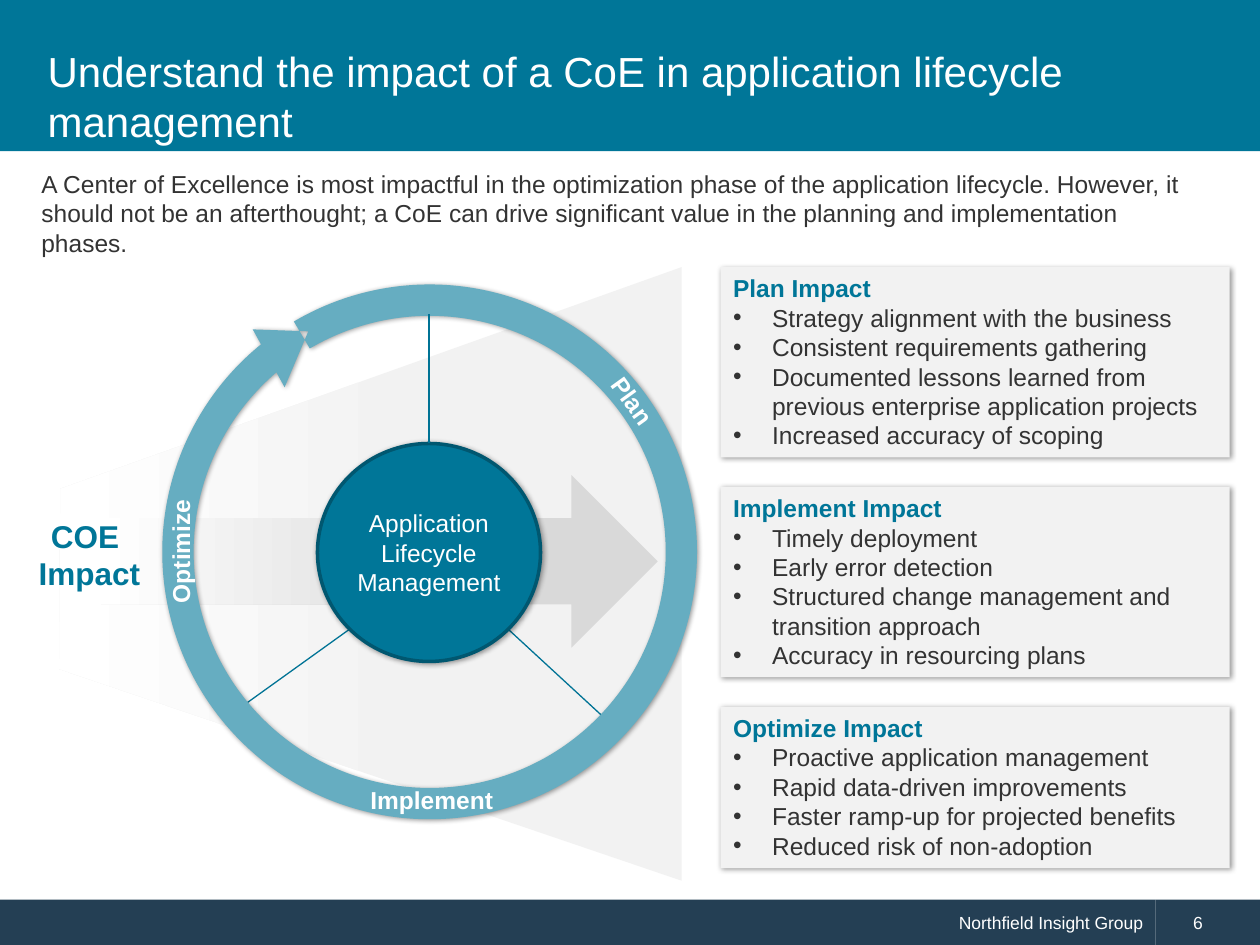
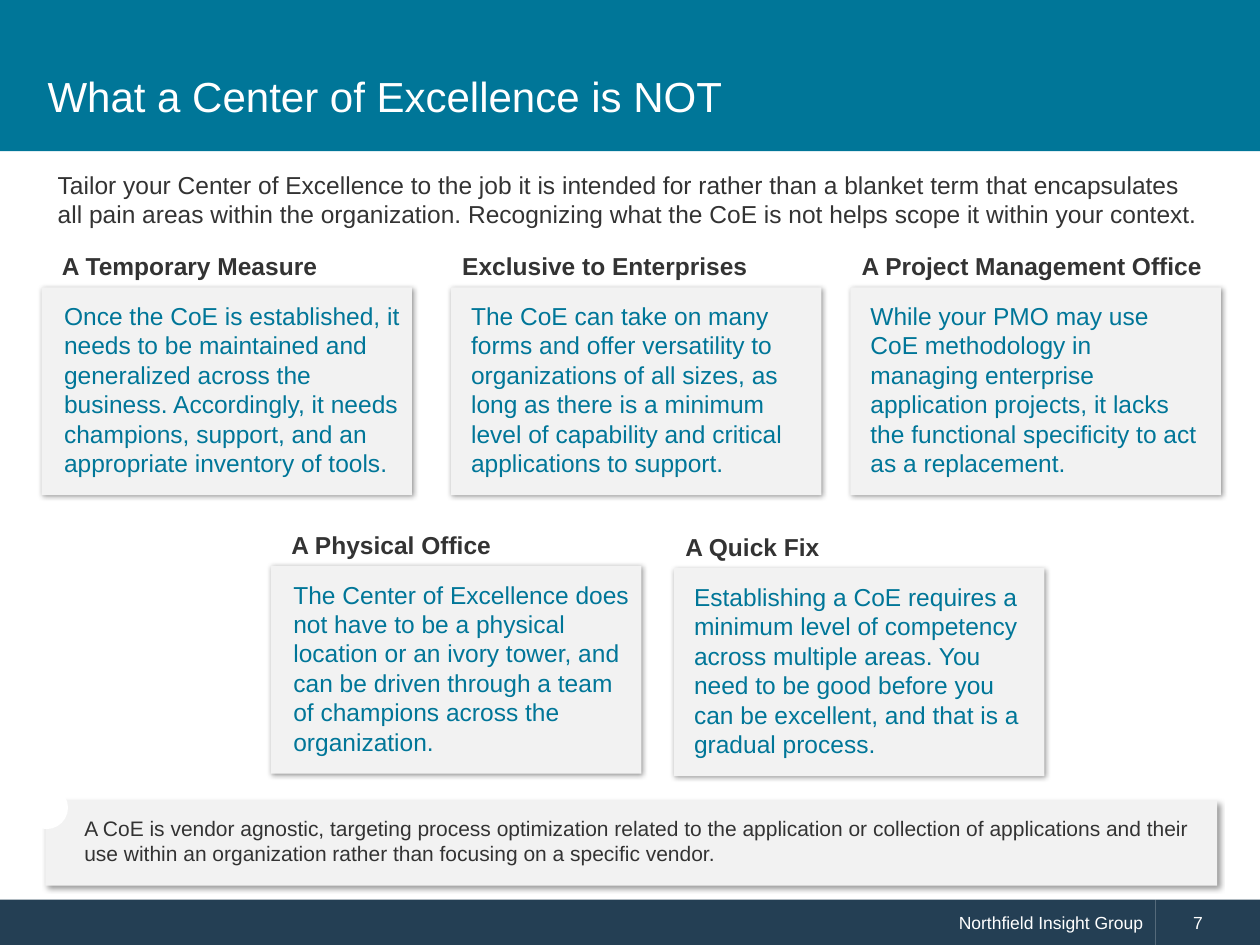
import dataclasses
import typing

import lxml.etree
import pptx
import pptx.dml.color
import pptx.enum.shapes
import pptx.enum.text
import pptx.oxml.ns
import pptx.util

SHAPES = pptx.enum.shapes.MSO_SHAPE
ALIGN = pptx.enum.text.PP_ALIGN
ANCHOR = pptx.enum.text.MSO_ANCHOR
GROW = pptx.enum.text.MSO_AUTO_SIZE.SHAPE_TO_FIT_TEXT
Color = pptx.dml.color.RGBColor
qn = pptx.oxml.ns.qn

# The slide is a grid of 100 columns by 75 rows; every cell is square.
COLUMNS, ROWS = 100, 75
CELL = pptx.util.Inches(10) // COLUMNS


@dataclasses.dataclass(frozen=True)
class Theme:
    font: str = "Arial"
    white: Color = Color.from_string("FFFFFF")
    ink: Color = Color.from_string("333333")
    teal: Color = Color.from_string("007698")
    teal_dark: Color = Color.from_string("005770")
    teal_light: Color = Color.from_string("66ADC1")
    spoke: Color = Color.from_string("007395")
    navy: Color = Color.from_string("243F54")
    panel: Color = Color.from_string("F2F2F2")
    arrow: Color = Color.from_string("D9D9D9")
    title: int = 24
    callout: int = 18
    body: int = 14
    note: int = 12
    footer: int = 10


THEME = Theme()


class Box(typing.NamedTuple):
    """Left, top, width and height in grid cells."""
    left: float
    top: float
    width: float
    height: float


@dataclasses.dataclass(frozen=True)
class Line:
    """One paragraph of text."""
    text: str
    color: Color = THEME.ink
    size: int = THEME.body
    bold: bool = False
    alignment: typing.Any = ALIGN.LEFT
    bulleted: bool = False


@dataclasses.dataclass(frozen=True)
class Panel:
    heading: str
    bullets: tuple[str, ...]
    height: float


@dataclasses.dataclass(frozen=True)
class Card:
    heading: str
    body: str
    left: float
    top: float
    heading_shift: float = -0.1
    centred: bool = False


@dataclasses.dataclass(frozen=True)
class PhaseLabel:
    text: str
    box: Box
    rotation: float = 0


PANELS = (
    Panel("Plan Impact", (
        "Strategy alignment with the business",
        "Consistent requirements gathering",
        "Documented lessons learned from previous enterprise application projects",
        "Increased accuracy of scoping"), 15.1),
    Panel("Implement Impact", (
        "Timely deployment",
        "Early error detection",
        "Structured change management and transition approach",
        "Accuracy in resourcing plans"), 15.1),
    Panel("Optimize Impact", (
        "Proactive application management",
        "Rapid data-driven improvements",
        "Faster ramp-up for projected benefits",
        "Reduced risk of non-adoption"), 12.8),
)
PANEL_TOP, PANEL_PITCH = 21.2, 17.45

PHASES = (
    PhaseLabel("Plan", Box(47.1, 30.2, 6.3, 3.4), 54.2),
    PhaseLabel("Implement", Box(28.4, 61.8, 12.1, 3.4)),
    PhaseLabel("Optimize", Box(8.8, 41.6, 11.1, 3.4), 270),
)

CARDS = (
    Card("A Temporary Measure",
         "Once the CoE is established, it needs to be maintained and generalized across the "
         "business. Accordingly, it needs champions, support, and an appropriate inventory of tools.",
         3.3, 22.8, -3.3, True),
    Card("Exclusive to Enterprises",
         "The CoE can take on many forms and offer versatility to organizations of all sizes, as "
         "long as there is a minimum level of capability and critical applications to support.",
         35.8, 22.8),
    Card("A Project Management Office",
         "While your PMO may use CoE methodology in managing enterprise application projects, it "
         "lacks the functional specificity to act as a replacement.",
         67.5, 22.8),
    Card("A Physical Office",
         "The Center of Excellence does not have to be a physical location or an ivory tower, and "
         "can be driven through a team of champions across the organization.",
         21.5, 44.9, -5.5, True),
    Card("A Quick Fix",
         "Establishing a CoE requires a minimum level of competency across multiple areas. You need "
         "to be good before you can be excellent, and that is a gradual process.",
         53.5, 45.1),
)


def cells(count: float) -> int:
    return round(count * CELL)


def apply_format(target: typing.Any, values: dict[str, typing.Any]) -> None:
    for name, value in values.items():
        setattr(target, name, value)


def write(shape: typing.Any, lines: typing.Sequence[Line], **frame_format: typing.Any) -> None:
    """Fill a shape with paragraphs; frame_format overrides text frame attributes."""
    frame = shape.text_frame
    apply_format(frame, {"word_wrap": True, "vertical_anchor": ANCHOR.TOP} | frame_format)
    for index, line in enumerate(lines):
        paragraph = frame.add_paragraph() if index else frame.paragraphs[0]
        paragraph.alignment = line.alignment
        run = paragraph.add_run()
        run.text = line.text
        apply_format(run.font, {"name": THEME.font, "size": pptx.util.Pt(line.size),
                                "bold": line.bold})
        run.font.color.rgb = line.color
        if line.bulleted:
            properties = paragraph._p.get_or_add_pPr()
            indent = cells(3.1)
            properties.set("marL", str(indent))
            properties.set("indent", str(-indent))
            lxml.etree.SubElement(properties, qn("a:buFont"), typeface=THEME.font)
            lxml.etree.SubElement(properties, qn("a:buChar"), char="•")


def add_text(slide: typing.Any, box: Box, *lines: Line, **frame_format: typing.Any) -> typing.Any:
    shape = slide.shapes.add_textbox(*map(cells, box))
    write(shape, lines, **frame_format)
    return shape


def add_block(slide: typing.Any, box: Box, color: Color | None = None,
              preset: typing.Any = SHAPES.RECTANGLE, shadow_distance: float = 0) -> typing.Any:
    """Add a borderless preset shape, with a soft shadow if a distance in points is given."""
    shape = slide.shapes.add_shape(preset, *map(cells, box))
    make_plain(shape)
    if color is not None:
        shape.fill.solid()
        shape.fill.fore_color.rgb = color
    if shadow_distance:
        effects = shape._element.spPr.find(qn("a:effectLst"))
        shadow = lxml.etree.SubElement(
            effects, qn("a:outerShdw"), blurRad=str(pptx.util.Pt(3)),
            dist=str(pptx.util.Pt(shadow_distance)), dir="2700000", algn="tl", rotWithShape="0")
        black = lxml.etree.SubElement(shadow, qn("a:srgbClr"), val="000000")
        lxml.etree.SubElement(black, qn("a:alpha"), val="40000")
    return shape


def make_plain(shape: typing.Any) -> None:
    shape.shadow.inherit = False
    shape.line.fill.background()


def fade_left(shape: typing.Any, color: Color, start: float) -> None:
    """Fade from a colour on the right to white on the left."""
    shape.fill.gradient()
    shape.fill.gradient_angle = 180
    stops = ((start, color), (1, THEME.white))
    for stop, (position, stop_color) in zip(shape.fill.gradient_stops, stops):
        stop.color.rgb = stop_color
        stop.position = position


def add_spoke(slide: typing.Any, *ends: float) -> typing.Any:
    spoke = slide.shapes.add_connector(pptx.enum.shapes.MSO_CONNECTOR.STRAIGHT, *map(cells, ends))
    spoke.line.color.rgb = THEME.spoke
    spoke.line.width = pptx.util.Pt(0.75)
    lxml.etree.SubElement(spoke._element.spPr, qn("a:effectLst"))
    return spoke


def add_base_slide(presentation: typing.Any, title: str, number: int) -> typing.Any:
    """Add a blank slide with the title band and the footer."""
    slide = presentation.slides.add_slide(presentation.slide_layouts[6])
    footer = add_block(slide, Box(0, 71.4, 91.7, 3.6), THEME.navy)
    write(footer, [Line("Northfield Insight Group", THEME.white, THEME.footer,
                        alignment=ALIGN.RIGHT)], vertical_anchor=ANCHOR.MIDDLE)
    page = add_block(slide, Box(91.7, 71.4, 8.3, 3.6), THEME.navy)
    write(page, [Line(str(number), THEME.white, THEME.footer)],
          vertical_anchor=ANCHOR.MIDDLE, margin_left=cells(3))
    add_block(slide, Box(0, 0, COLUMNS, 12), THEME.teal)
    add_text(slide, Box(2.8, 2.8, 94.3, 9.6), Line(title, THEME.white, THEME.title),
             vertical_anchor=ANCHOR.MIDDLE)
    return slide


def add_lifecycle(slide: typing.Any) -> None:
    corners = [tuple(map(cells, corner))
               for corner in ((54.1, 21.2), (54.1, 69.9), (4.7, 53.1), (4.8, 38.8))]
    builder = slide.shapes.build_freeform(*corners[0])
    builder.add_line_segments(corners[1:], close=True)
    beam = builder.convert_to_shape()
    make_plain(beam)
    fade_left(beam, THEME.panel, 0.44)
    arrow = add_block(slide, Box(8, 37.7, 44.2, 13.7), preset=SHAPES.RIGHT_ARROW)
    fade_left(arrow, THEME.arrow, 0.35)

    add_spoke(slide, 40.4, 50, 48.1, 57.1)
    add_spoke(slide, 27.8, 49.9, 19.3, 56)
    ring = add_block(slide, Box(11.5, 21.2, 45.2, 45.2), THEME.teal_light,
                     SHAPES.CIRCULAR_ARROW, 1)
    for index, value in enumerate((0.055, 6.557, 138.152, 143.692, 0.058)):
        ring.adjustments[index] = value
    hub = add_block(slide, Box(25.2, 35.2, 17.7, 17.3), THEME.teal, SHAPES.OVAL, 1)
    hub.line.color.rgb = THEME.teal_dark
    hub.line.width = pptx.util.Pt(2)
    write(hub, [Line("Application Lifecycle Management", THEME.white, alignment=ALIGN.CENTER)],
          vertical_anchor=ANCHOR.MIDDLE, margin_left=cells(0.4), margin_right=cells(0.4))
    add_spoke(slide, 34.05, 35.2, 34.05, 24.9).begin_connect(hub, 0)

    for phase in PHASES:
        label = add_text(slide, phase.box, Line(phase.text, THEME.white, bold=True),
                         word_wrap=False, auto_size=GROW)
        label.rotation = phase.rotation


def add_panel(slide: typing.Any, panel: Panel, top: float) -> None:
    shape = add_block(slide, Box(57.2, top, 40.4, panel.height), THEME.panel, shadow_distance=1)
    bullets = [Line(bullet, bulleted=True) for bullet in panel.bullets]
    write(shape, [Line(panel.heading, THEME.teal, bold=True), *bullets], auto_size=GROW)


def add_card(slide: typing.Any, card: Card) -> None:
    body_shift, body_width = (0.8, 28.8) if card.centred else (0.6, 28.2)
    alignment = ALIGN.CENTER if card.centred else ALIGN.LEFT
    add_block(slide, Box(card.left, card.top, 29.4, 16.5), THEME.panel, shadow_distance=1)
    add_text(slide, Box(card.left + card.heading_shift, card.top - 4.2, 30.1, 5),
             Line(card.heading, bold=True, alignment=alignment), vertical_anchor=ANCHOR.MIDDLE)
    add_text(slide, Box(card.left + body_shift, card.top + 0.6, body_width, 15.1),
             Line(card.body, THEME.teal), auto_size=GROW)


def build_impact_slide(presentation: typing.Any) -> None:
    slide = add_base_slide(
        presentation, "Understand the impact of a CoE in application lifecycle management", 6)
    add_lifecycle(slide)
    add_text(slide, Box(2.3, 12.9, 94.5, 5.7), Line(
        "A Center of Excellence is most impactful in the optimization phase of the application "
        "lifecycle. However, it should not be an afterthought; a CoE can drive significant value "
        "in the planning and implementation phases."), auto_size=GROW)
    for index, panel in enumerate(PANELS):
        add_panel(slide, panel, PANEL_TOP + index * PANEL_PITCH)
    callout = [Line(text, THEME.teal, THEME.callout, True, ALIGN.CENTER)
               for text in ("COE ", "Impact")]
    add_text(slide, Box(2, 40.5, 10.2, 7.1), *callout, word_wrap=False, auto_size=GROW)


def build_not_slide(presentation: typing.Any) -> None:
    slide = add_base_slide(presentation, "What a Center of Excellence is NOT", 7)
    add_text(slide, Box(3.6, 13, 92.5, 5.7), Line(
        "Tailor your Center of Excellence to the job it is intended for rather than a blanket term "
        "that encapsulates all pain areas within the organization. Recognizing what the CoE is not "
        "helps scope it within your context."), auto_size=GROW)
    for card in CARDS:
        add_card(slide, card)
    note = add_block(slide, Box(3.6, 63.5, 93, 6.8), THEME.panel, shadow_distance=2)
    write(note, [Line(
        "A CoE is vendor agnostic, targeting process optimization related to the application or "
        "collection of applications and their use within an organization rather than focusing on "
        "a specific vendor.", size=THEME.note)],
        vertical_anchor=ANCHOR.MIDDLE, margin_left=cells(3.1), margin_top=cells(0.8),
        margin_right=cells(0.4), margin_bottom=cells(1.2))
    add_block(slide, Box(2, 62.4, 3.4, 3.4), THEME.white, SHAPES.OVAL)


def main() -> None:
    presentation = pptx.Presentation()
    apply_format(presentation, {"slide_width": COLUMNS * CELL, "slide_height": ROWS * CELL})
    build_impact_slide(presentation)
    build_not_slide(presentation)
    presentation.save("out.pptx")


if __name__ == "__main__":
    main()
